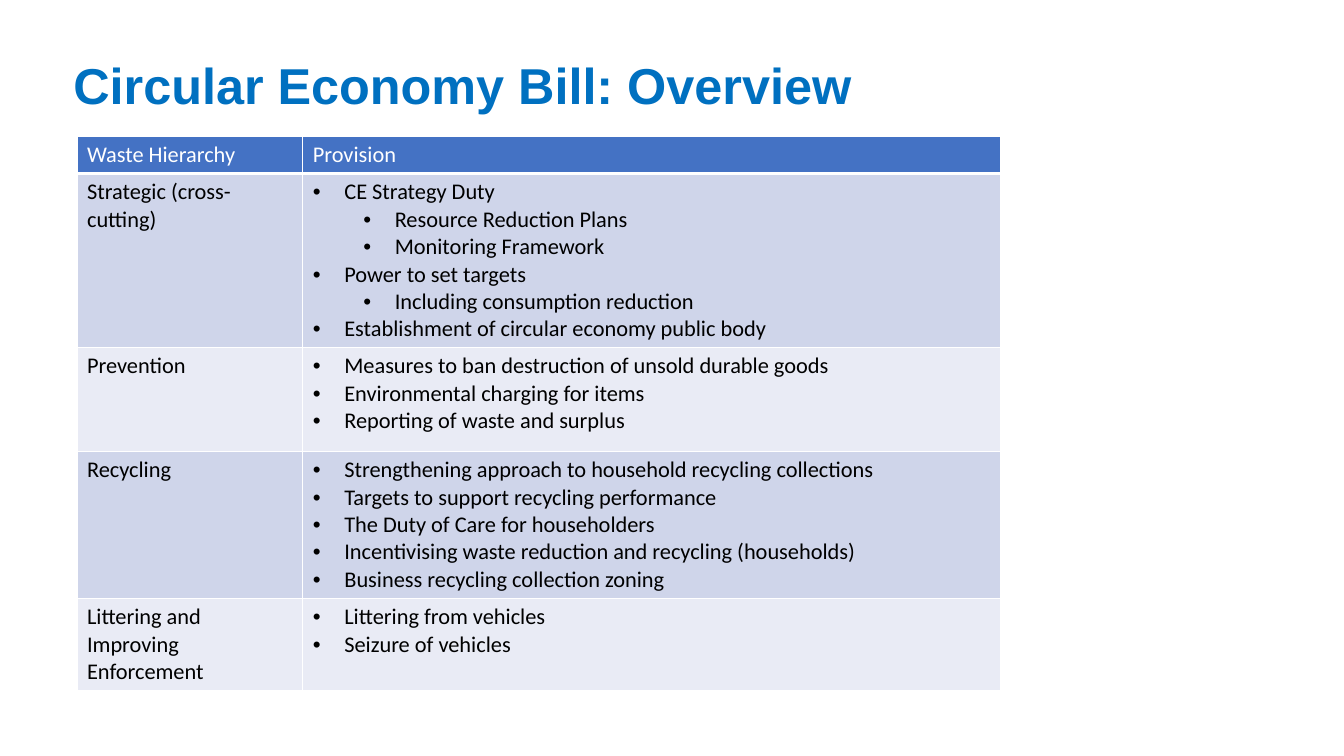
from dataclasses import dataclass

from lxml import etree
from pptx import Presentation
from pptx.dml.color import RGBColor
from pptx.enum.text import MSO_ANCHOR, PP_ALIGN
from pptx.oxml.ns import qn
from pptx.util import Pt

CENTER, LEFT = PP_ALIGN.CENTER, PP_ALIGN.LEFT
TOP = MSO_ANCHOR.TOP

COLORS = {
    "title": "0070C0",
    "header": "4472C4",
    "dark band": "CFD5EA",
    "light band": "E9EBF5",
    "white": "FFFFFF",
    "black": "000000",
}
COLUMN_WIDTHS = (161.3, 498.2)
BULLET_HANG = 22.5
LEVEL_INDENT = 36


@dataclass
class Bullet:
    text: str
    level: int = 0


@dataclass
class Stage:
    name: str
    height: float
    provisions: list[Bullet]


HEADINGS = ("Waste Hierarchy", "Provision")
HEADER_HEIGHT = 26.8
STAGES = [
    Stage("Strategic (cross-cutting)", 124.3, [
        Bullet("CE Strategy Duty"),
        Bullet("Resource Reduction Plans", 1),
        Bullet("Monitoring Framework", 1),
        Bullet("Power to set targets"),
        Bullet("Including consumption reduction", 1),
        Bullet("Establishment of circular economy public body"),
    ]),
    Stage("Prevention", 74.2, [
        Bullet("Measures to ban destruction of unsold durable goods"),
        Bullet("Environmental charging for items"),
        Bullet("Reporting of waste and surplus"),
    ]),
    Stage("Recycling", 105, [
        Bullet("Strengthening approach to household recycling collections"),
        Bullet("Targets to support recycling performance"),
        Bullet("The Duty of Care for householders"),
        Bullet("Incentivising waste reduction and recycling (households)"),
        Bullet("Business recycling collection zoning"),
    ]),
    Stage("Littering and Improving Enforcement", 65.8, [
        Bullet("Littering from vehicles"),
        Bullet("Seizure of vehicles"),
    ]),
]


def write(paragraph, text: str, *, color: str, size: float = 16,
          font: str = "Calibri", bold: bool = False, align=LEFT) -> None:
    paragraph.alignment = align
    run = paragraph.add_run()
    run.text = text
    run.font.name = font
    run.font.size = Pt(size)
    run.font.bold = bold
    run.font.color.rgb = RGBColor.from_string(COLORS[color])


def add_bullet(paragraph, level: int) -> None:
    paragraph.level = level
    properties = paragraph._p.get_or_add_pPr()
    properties.set("marL", str(Pt(BULLET_HANG + level * LEVEL_INDENT)))
    properties.set("indent", str(-Pt(BULLET_HANG)))
    etree.SubElement(properties, qn("a:buFont"), typeface="Arial")
    etree.SubElement(properties, qn("a:buChar"), char="•")


def style_cell(cell, fill: str, bottom_width: float = 1) -> None:
    properties = cell._tc.get_or_add_tcPr()
    for side, width in (("L", 1), ("R", 1), ("T", 1), ("B", bottom_width)):
        line = etree.SubElement(properties, qn(f"a:ln{side}"), w=str(Pt(width)))
        solid = etree.SubElement(line, qn("a:solidFill"))
        etree.SubElement(solid, qn("a:srgbClr"), val=COLORS["white"])
    cell.fill.solid()
    cell.fill.fore_color.rgb = RGBColor.from_string(COLORS[fill])


def add_title(slide) -> None:
    box = slide.shapes.add_textbox(Pt(-7.9), Pt(31.7), Pt(676.8), Pt(103.7))
    frame = box.text_frame
    frame.word_wrap = True
    frame.vertical_anchor = TOP
    frame.margin_top = Pt(7.2)
    write(frame.paragraphs[0], "Circular Economy Bill: Overview", color="title",
          size=36, font="Arial", bold=True, align=CENTER)


def add_provisions(slide) -> None:
    heights = [HEADER_HEIGHT] + [stage.height for stage in STAGES]
    table = slide.shapes.add_table(
        len(heights), len(COLUMN_WIDTHS), Pt(55), Pt(97.2),
        Pt(sum(COLUMN_WIDTHS)), Pt(sum(heights))).table
    for column, width in zip(table.columns, COLUMN_WIDTHS):
        column.width = Pt(width)
    for row, height in zip(table.rows, heights):
        row.height = Pt(height)

    # Header row
    for column, heading in enumerate(HEADINGS):
        cell = table.cell(0, column)
        style_cell(cell, "header", bottom_width=3)
        write(cell.text_frame.paragraphs[0], heading, color="white")

    # One banded row per stage of the hierarchy
    for row, stage in enumerate(STAGES, start=1):
        name_cell, provision_cell = table.cell(row, 0), table.cell(row, 1)
        for cell in (name_cell, provision_cell):
            style_cell(cell, "dark band" if row % 2 else "light band")
        write(name_cell.text_frame.paragraphs[0], stage.name, color="black")
        frame = provision_cell.text_frame
        for index, bullet in enumerate(stage.provisions):
            paragraph = frame.add_paragraph() if index else frame.paragraphs[0]
            add_bullet(paragraph, bullet.level)
            write(paragraph, bullet.text, color="black")


def main() -> None:
    presentation = Presentation()
    presentation.slide_width, presentation.slide_height = Pt(960), Pt(540)
    slide = presentation.slides.add_slide(presentation.slide_layouts[6])
    add_title(slide)
    add_provisions(slide)
    presentation.save("out.pptx")


if __name__ == "__main__":
    main()
